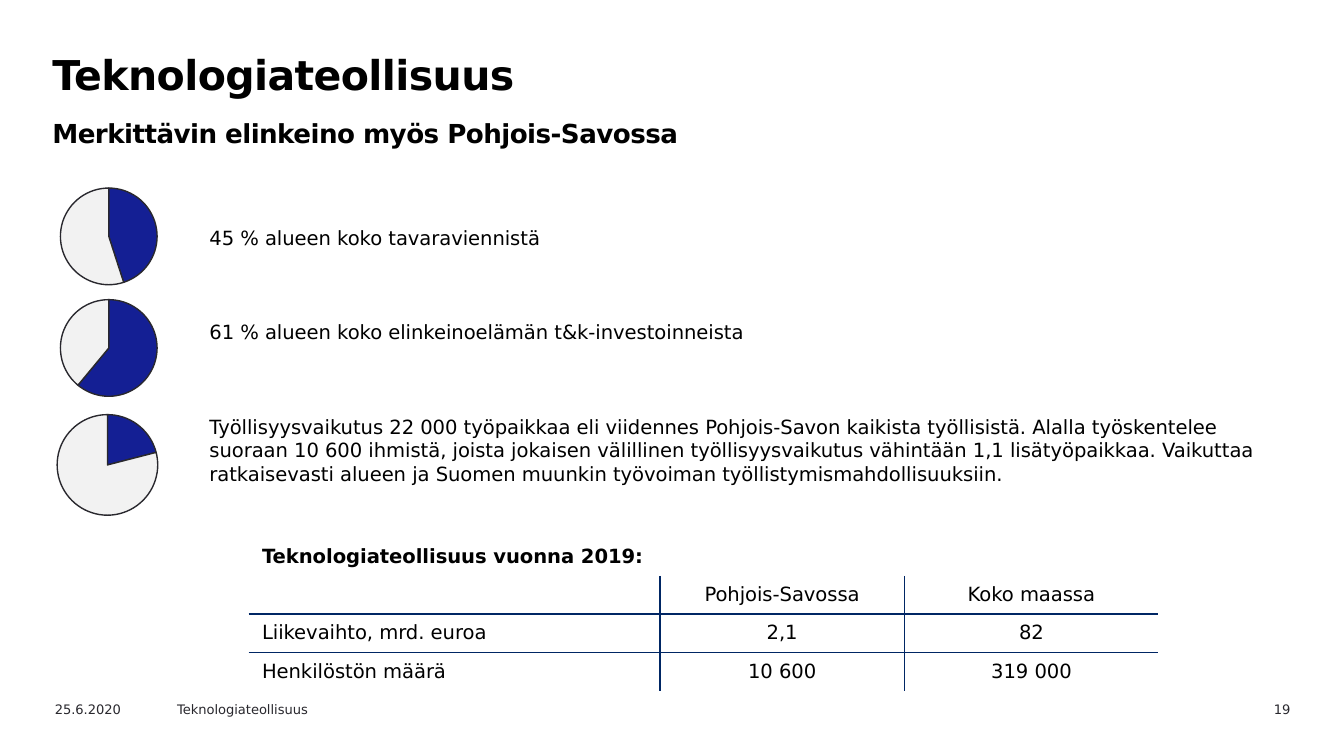
"""Build a slide on the technology industry with share pies and a key-figure table."""
from dataclasses import dataclass
from lxml import etree
from pptx import Presentation
from pptx import util as u
from pptx.chart import data
from pptx.dml.color import RGBColor
from pptx.enum import chart as ch, text as t
from pptx.oxml import ns, parse_xml


@dataclass(frozen=True)
class Theme:
    face: str = "DejaVu Sans"
    black: str = "000000"
    ink: str = "29282E"
    blue: str = "141F94"
    pale: str = "F2F2F2"
    rule: str = "002664"
    title: float = 22
    sub: float = 14
    body: float = 10.5
    foot: float = 7


def write(para, words, size, color, bold=False, align=None, track=None):
    run = para.add_run()
    run.text = words
    font = run.font
    font.name, font.size, font.bold = Theme.face, u.Pt(size), bold
    font.color.rgb = RGBColor.from_string(color)
    if align is not None:
        para.alignment = align
    if track is not None:
        font._element.set("spc", str(round(track * 100)))


class Page:
    def __init__(self, slide, theme):
        self.slide, self.theme = slide, theme

    def box(self, x, y, w, h):
        frame = self.slide.shapes.add_textbox(*map(u.Inches, (x, y, w, h))).text_frame
        frame.word_wrap = True
        return frame

    def head(self, x, y, w, h, title, sub):
        th = self.theme
        frame = self.box(x, y, w, h)
        frame.margin_left = u.Inches(0.11)
        para = frame.paragraphs[0]
        para.line_spacing = u.Pt(27)
        write(para, title, th.title, th.black, bold=True, track=-0.3)
        para.add_line_break()
        write(para, sub, th.sub, th.black, bold=True, track=-0.3)

    def body(self, x, y, w, h, facts, gap):
        frame = self.box(x, y, w, h)
        for i, fact in enumerate(facts):
            para = frame.add_paragraph() if i else frame.paragraphs[0]
            if i:
                para.space_before = u.Pt(gap)
            write(para, fact, self.theme.body, self.theme.black)

    def foot(self, x, w, words, align=t.PP_ALIGN.LEFT):
        frame = self.box(x, 5.17, w, 0.18)
        write(frame.paragraphs[0], words, self.theme.foot, self.theme.ink, align=align)

    def pie(self, x, y, side, share):
        th = self.theme
        feed = data.CategoryChartData(number_format="0")
        feed.categories = ["1", "2"]
        feed.add_series("Series 1", (share, 100 - share))
        place = map(u.Inches, (x, y, side, side))
        chart = self.slide.shapes.add_chart(ch.XL_CHART_TYPE.PIE, *place, feed).chart
        chart.has_legend = chart.has_title = False
        chart.font.name, chart.font.size = th.face, u.Pt(18)
        chart.font.color.rgb = RGBColor.from_string(th.ink)
        plot = chart.plots[0]
        plot.vary_by_categories = False
        for i, color in enumerate((th.blue, th.pale)):
            form = plot.series[0].points[i].format
            form.fill.solid()
            form.fill.fore_color.rgb = RGBColor.from_string(color)
            form.line.color.rgb = RGBColor.from_string(th.ink)
            form.line.width = u.Pt(0.75)
        area = chart._chartSpace.chart.plotArea
        for old in area.findall(ns.qn("c:layout")):
            area.remove(old)
        parts = (("layoutTarget", "inner"), ("xMode", "edge"), ("yMode", "edge"),
                 ("x", 0.14), ("y", 0.14), ("w", 0.72), ("h", 0.72))
        inner = "".join(f'<c:{tag} val="{val}"/>' for tag, val in parts)
        area.insert(0, parse_xml(f'<c:layout {ns.nsdecls("c")}><c:manualLayout>'
                                 f'{inner}</c:manualLayout></c:layout>'))

    def edge(self, cell, sides):
        props = cell._tc.get_or_add_tcPr()
        for i, side in enumerate("LRTB"):
            paint = f'<a:solidFill><a:srgbClr val="{self.theme.rule}"/></a:solidFill>'
            paint = paint if side in sides else "<a:noFill/>"
            props.insert(i, parse_xml(f'<a:ln{side} {ns.nsdecls("a")} w="12700">{paint}</a:ln{side}>'))

    def table(self, x, y, cols, high, rows):
        th = self.theme
        place = map(u.Inches, (x, y, sum(cols), high))
        grid = self.slide.shapes.add_table(len(rows), len(cols), *place).table
        grid.first_row = grid.horz_banding = False
        for col, wide in zip(grid.columns, cols):
            col.width = u.Inches(wide)
        for r, row in enumerate(rows):
            for c, words in enumerate(row):
                cell = grid.cell(r, c)
                cell.fill.background()
                cell.vertical_anchor = t.MSO_ANCHOR.MIDDLE
                para = cell.text_frame.paragraphs[0]
                if words:
                    align = t.PP_ALIGN.CENTER if c else t.PP_ALIGN.LEFT
                    write(para, words, th.body, th.black, bold=r == 0, align=align)
                else:
                    end = etree.SubElement(para._p, ns.qn("a:endParaRPr"))
                    end.set("sz", str(round(th.body * 100)))
                sides = ""
                if r:
                    sides += "L" if c else ""
                    sides += "R" if c < len(cols) - 1 else ""
                    sides += "T" if r > 1 else ""
                    sides += "B" if r < len(rows) - 1 else ""
                self.edge(cell, sides)
        grid.cell(0, 0).merge(grid.cell(0, len(cols) - 1))


def main():
    deck = Presentation()
    deck.slide_width = u.Inches(10)
    deck.slide_height = deck.slide_width * 9 // 16
    page = Page(deck.slides.add_slide(deck.slide_layouts[6]), Theme())
    page.head(0.28, 0.31, 8.74, 0.71, "Teknologiateollisuus",
              "Merkittävin elinkeino myös Pohjois-Savossa")
    page.foot(8.76, 0.94, "19", align=t.PP_ALIGN.RIGHT)
    page.foot(0.31, 1, "25.6.2020")
    page.foot(1.22, 1.42, "Teknologiateollisuus")
    page.body(1.46, 1.63, 8.19, 2.42, (
        "45 % alueen koko tavaraviennistä",
        "61 % alueen koko elinkeinoelämän t&k-investoinneista",
        "Työllisyysvaikutus 22 000 työpaikkaa eli viidennes Pohjois-Savon kaikista "
        "työllisistä. Alalla työskentelee suoraan 10 600 ihmistä, joista jokaisen "
        "välillinen työllisyysvaikutus vähintään 1,1 lisätyöpaikkaa. Vaikuttaa "
        "ratkaisevasti alueen ja Suomen muunkin työvoiman työllistymismahdollisuuksiin.",
    ), gap=38)
    for spot in ((0.31, 1.26, 1, 45), (0.31, 2.09, 1, 61), (0.28, 2.94, 1.04, 21)):
        page.pie(*spot)
    page.table(1.85, 4, (3.06, 1.82, 1.89), 1.14, (
        ("Teknologiateollisuus vuonna 2019:", "", ""),
        ("", "Pohjois-Savossa", "Koko maassa"),
        ("Liikevaihto, mrd. euroa", "2,1", "82"),
        ("Henkilöstön määrä", "10 600", "319 000"),
    ))
    deck.save("out.pptx")


if __name__ == "__main__":
    main()
